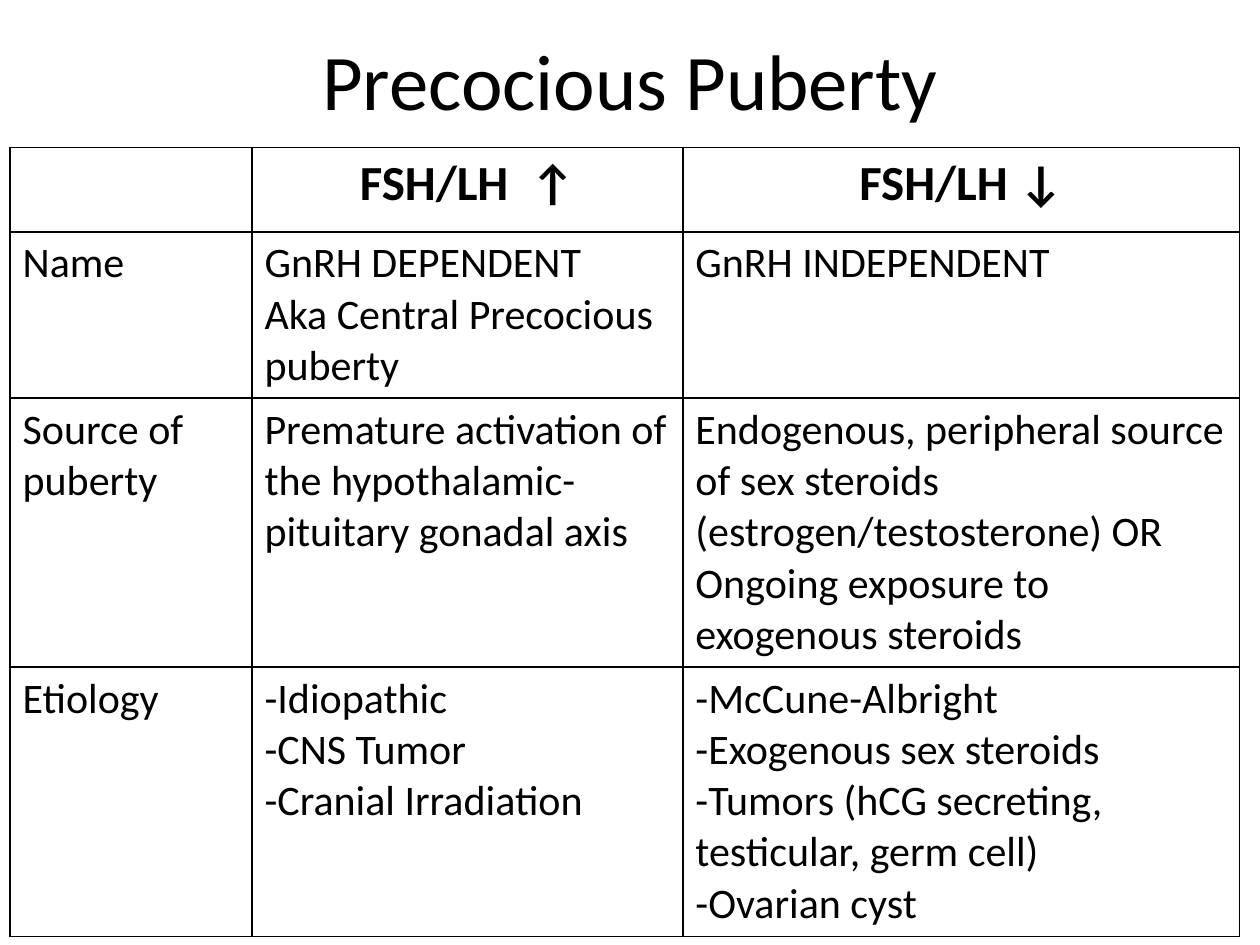
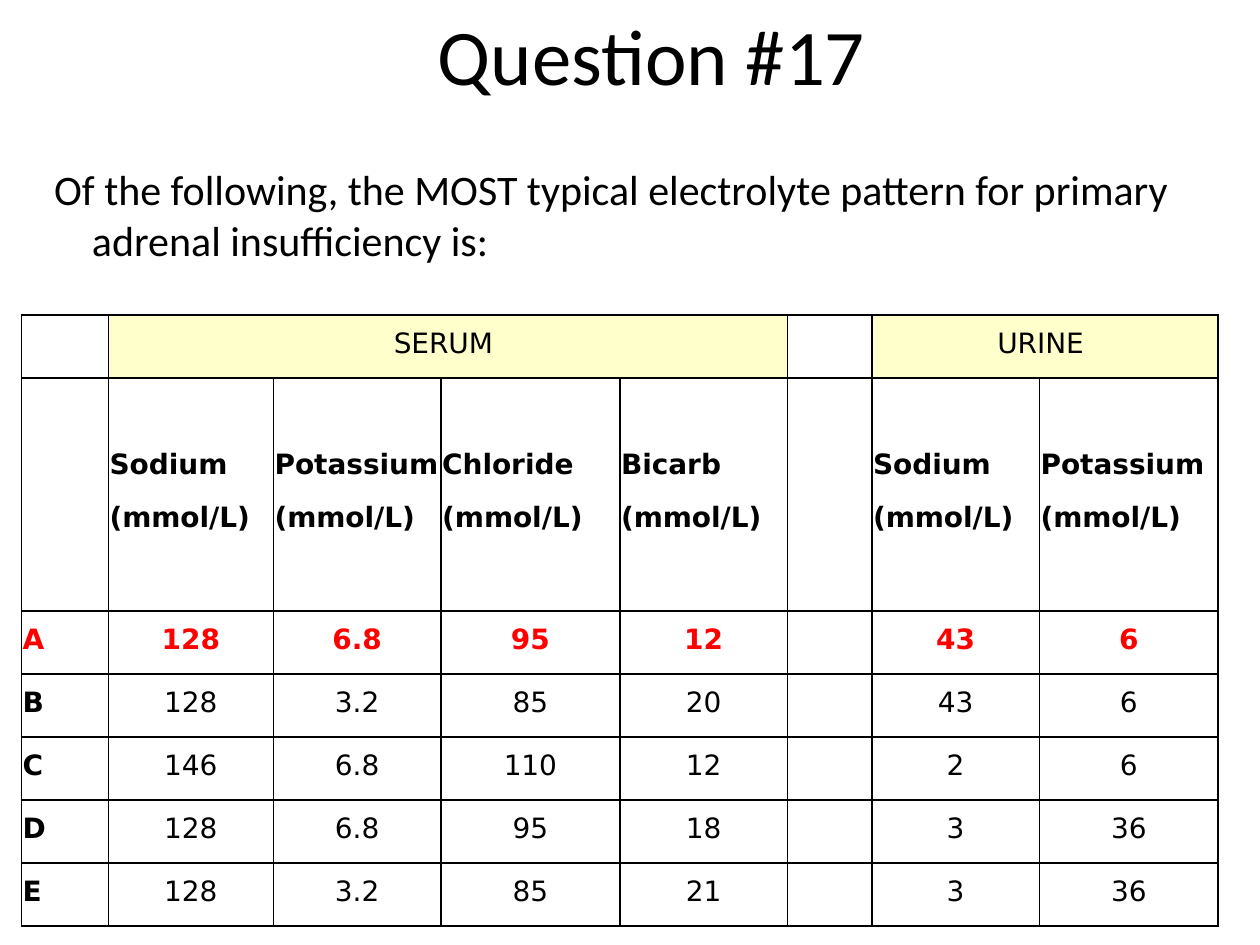
from lxml import etree
from pptx import Presentation
from pptx import util as u
from pptx.dml import color
from pptx.enum import text
from pptx.oxml import ns

BLACK, WHITE, RED, CREAM = "000000", "FFFFFF", "FF0000", "FFFFCC"
SANS, MONO = "Calibri", "DejaVu Sans"
MID, TOP = text.MSO_ANCHOR.MIDDLE, text.MSO_ANCHOR.TOP
LEFT, CENTER = text.PP_ALIGN.LEFT, text.PP_ALIGN.CENTER

PUBERTY = [
    [[], ["FSH/LH  ↑"], ["FSH/LH ↓"]],
    [["Name"],
     ["GnRH DEPENDENT", "Aka Central Precocious puberty"],
     ["GnRH INDEPENDENT"]],
    [["Source of puberty"],
     ["Premature activation of the hypothalamic-pituitary gonadal axis"],
     ["Endogenous, peripheral source of sex steroids (estrogen/testosterone) OR",
      "Ongoing exposure to exogenous steroids"]],
    [["Etiology"],
     ["-Idiopathic", "-CNS Tumor", "-Cranial Irradiation"],
     ["-McCune-Albright", "-Exogenous sex steroids",
      "-Tumors (hCG secreting, testicular, germ cell)", "-Ovarian cyst"]],
]
PROMPT = ("Of the following, the MOST typical electrolyte pattern "
          "for primary adrenal insufficiency is:")
GROUPS = [("SERUM ", 1, 4), ("URINE ", 6, 7)]
SALTS = ["", "Sodium", "Potassium", "Chloride", "Bicarb", "", "Sodium", "Potassium"]
UNIT = "(mmol/L)"
ANSWER = "A"
CHOICES = [
    ["A", "128", "6.8", "95", "12", "", "43", "6"],
    ["B", "128", "3.2", "85", "20", "", "43", "6"],
    ["C", "146", "6.8", "110", "12", "", "2", "6"],
    ["D", "128", "6.8", "95", "18", "", "3", "36"],
    ["E", "128", "3.2", "85", "21", "", "3", "36"],
]


def paint(code):
    return color.RGBColor.from_string(code)


def write(frame, lines, size, font=SANS, bold=False, ink=BLACK, align=LEFT):
    for i, line in enumerate(lines):
        para = frame.add_paragraph() if i else frame.paragraphs[0]
        para.alignment = align
        run = para.add_run()
        run.text = line
        run.font.size = u.Pt(size)
        run.font.name = font
        run.font.bold = bold
        run.font.color.rgb = paint(ink)


def place(shape, left, top, width, height):
    shape.left, shape.top = u.Inches(left), u.Inches(top)
    shape.width, shape.height = u.Inches(width), u.Inches(height)


def head(slide, words, left, anchor):
    title = slide.shapes.title
    place(title, left, 0, 9, 1.25)
    title.text_frame.auto_size = text.MSO_AUTO_SIZE.NONE
    title.text_frame.vertical_anchor = anchor
    write(title.text_frame, [words], 45, align=CENTER)


def edge(cell):
    props = cell._tc.get_or_add_tcPr()
    for side in ("lnL", "lnR", "lnT", "lnB"):
        line = etree.SubElement(props, ns.qn(f"a:{side}"), w=str(u.Pt(1)))
        fill = etree.SubElement(line, ns.qn("a:solidFill"))
        etree.SubElement(fill, ns.qn("a:srgbClr"), val=BLACK)


def grid(slide, left, top, cols, rows):
    frame = slide.shapes.add_table(
        len(rows), len(cols), u.Inches(left), u.Inches(top),
        u.Inches(sum(cols)), u.Inches(sum(rows)))
    table = frame.table
    table.first_row = table.horz_banding = False
    for col, width in zip(table.columns, cols):
        col.width = u.Inches(width)
    for row, height in zip(table.rows, rows):
        row.height = u.Inches(height)
    for cell in table.iter_cells():
        edge(cell)
        cell.fill.solid()
        cell.fill.fore_color.rgb = paint(WHITE)
    return table


def lab(cell, lines, **look):
    cell.vertical_anchor = MID
    cell.margin_left = cell.margin_right = u.Inches(0.01)
    cell.margin_top = cell.margin_bottom = u.Inches(0.01)
    write(cell.text_frame, lines, 16, MONO, **look)
    for i, para in enumerate(cell.text_frame.paragraphs):
        para.line_spacing = u.Pt(15)
        para.space_before = u.Pt(15 if i else 0)


def causes(deck):
    slide = deck.slides.add_slide(deck.slide_layouts[5])
    head(slide, "Precocious Puberty", 0.5, MID)
    table = grid(slide, 0.08, 1.17, [1.92, 3.42, 4.42], [0.67, 1.32, 2.13, 2.14])
    for r, row in enumerate(PUBERTY):
        look = {} if r else {"bold": True, "align": CENTER}
        for c, lines in enumerate(row):
            write(table.cell(r, c).text_frame, lines, 24 if r else 28, **look)


def quiz(deck):
    slide = deck.slides.add_slide(deck.slide_layouts[1])
    head(slide, "Question #17", 0.67, TOP)
    body = slide.placeholders[1]
    place(body, 0.33, 1.25, 9.33, 6.08)
    body.text_frame.auto_size = text.MSO_AUTO_SIZE.NONE
    write(body.text_frame, [PROMPT], 24)
    props = body.text_frame.paragraphs[0]._p.get_or_add_pPr()
    props.set("marL", str(u.Inches(0.3)))
    props.set("indent", str(u.Inches(-0.3)))
    etree.SubElement(props, ns.qn("a:buNone"))

    cols = [0.69, 1.31, 1.33, 1.42, 1.33, 0.67, 1.33, 1.42]
    table = grid(slide, 0.17, 2.5, cols, [0.5, 1.85] + [0.5] * len(CHOICES))
    for name, first, last in GROUPS:
        cell = table.cell(0, first)
        cell.merge(table.cell(0, last))
        cell.fill.fore_color.rgb = paint(CREAM)
        lab(cell, [name], align=CENTER)
    for c, salt in enumerate(SALTS):
        if salt:
            lab(table.cell(1, c), [salt, UNIT], bold=True)
    for r, row in enumerate(CHOICES, 2):
        right = row[0] == ANSWER
        for c, value in enumerate(row):
            if value:
                lab(table.cell(r, c), [value], bold=right or c == 0,
                    ink=RED if right else BLACK, align=CENTER if c else LEFT)


def main():
    deck = Presentation()
    deck.slide_width, deck.slide_height = u.Inches(10), u.Inches(7.5)
    causes(deck)
    quiz(deck)
    deck.save("out.pptx")


if __name__ == "__main__":
    main()
